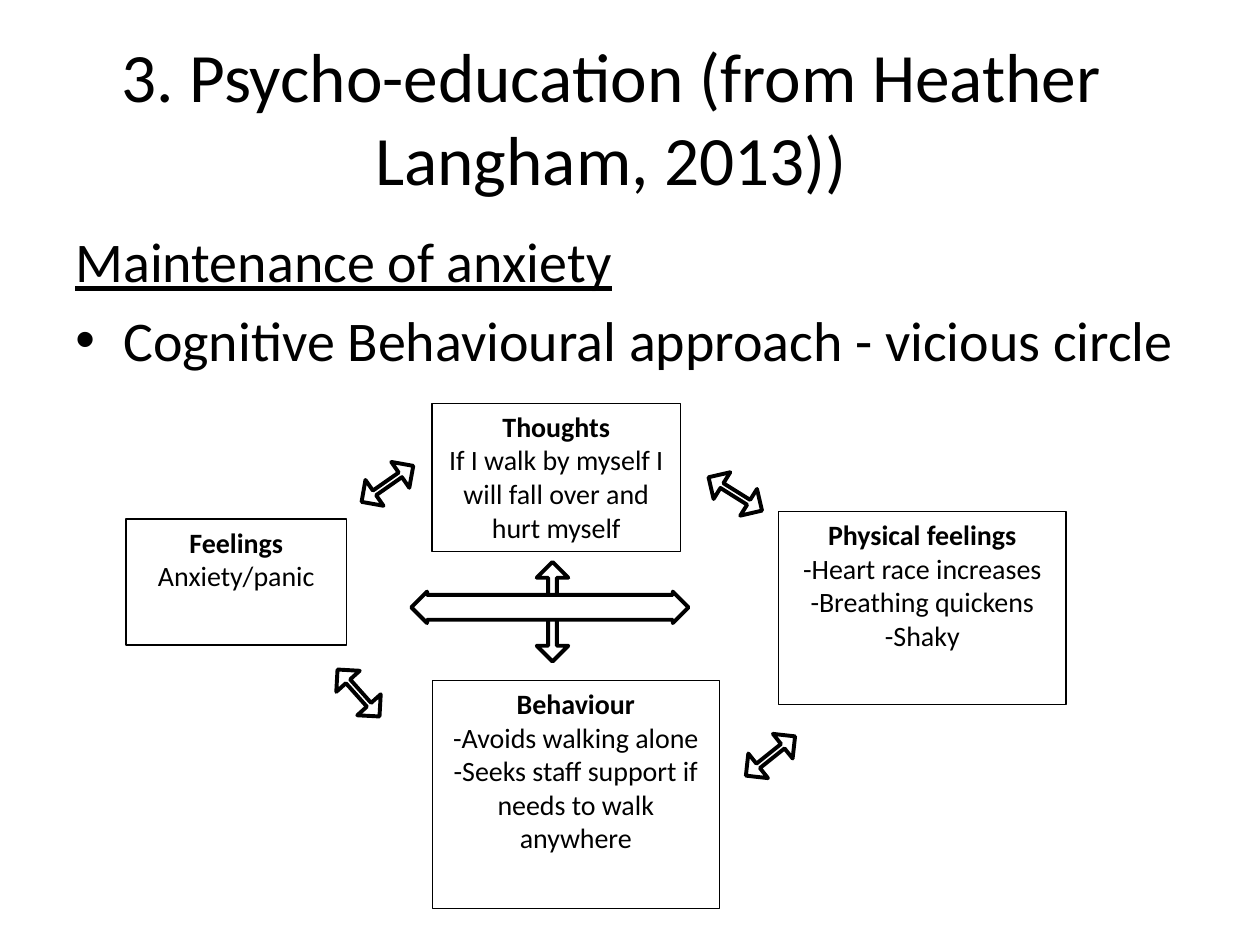
from pptx import Presentation
from pptx.dml.color import RGBColor as Rgb
from pptx.enum.shapes import MSO_SHAPE as Shape
from pptx.enum.text import MSO_ANCHOR as Anchor, PP_ALIGN as Align
from pptx.oxml.ns import qn
from pptx.util import Emu, Pt
from lxml.etree import SubElement

SCALE = 9144
FONT = "Calibri"
COLOURS = {"ink": "000000", "paper": "FFFFFF"}


def px(length):
    """Turn px, 100 to the inch, into EMU."""
    return Emu(length * SCALE)


def colour(name):
    """Look up a colour by its role."""
    return Rgb.from_string(COLOURS[name])


def write(frame, text, size=16, bold=False, underline=False, align=Align.CENTER,
          before=0, bullet=None, indent=0):
    """Add one formatted paragraph to a text frame."""
    para = frame.paragraphs[0]
    if para.runs:
        para = frame.add_paragraph()
    para.alignment = align
    para.space_before = Pt(before)
    props = para._p.get_or_add_pPr()
    props.set("marL", str(px(indent)))
    props.set("indent", str(px(-indent)))
    if bullet:
        SubElement(props, qn("a:buFont"), typeface="Arial")
        SubElement(props, qn("a:buChar"), char=bullet)
    else:
        SubElement(props, qn("a:buNone"))
    span = para.add_run()
    span.text = text
    span.font.name = FONT
    span.font.size = Pt(size)
    span.font.bold = bold
    span.font.underline = underline
    span.font.color.rgb = colour("ink")


def add_frame(page, box, anchor=Anchor.TOP):
    """Add a wrapping text box and return its frame."""
    frame = page.shapes.add_textbox(*map(px, box)).text_frame
    frame.word_wrap = True
    frame.vertical_anchor = anchor
    return frame


def add_outlined(page, kind, box, width):
    """Add a preset shape with a black outline and no shadow."""
    shape = page.shapes.add_shape(kind, *map(px, box))
    shape.shadow.inherit = False
    shape.line.color.rgb = colour("ink")
    shape.line.width = Pt(width)
    return shape


def add_title(page, box):
    """Write the slide title."""
    frame = add_frame(page, box, Anchor.MIDDLE)
    write(frame, "3. Psycho-education (from Heather Langham, 2013))", size=39.6)


def add_body(page, box):
    """Write the heading and the bullet."""
    frame = add_frame(page, box)
    style = {"size": 32, "align": Align.LEFT, "before": 6.4, "indent": 38}
    write(frame, "Maintenance of anxiety", underline=True, **style)
    write(frame, "Cognitive Behavioural approach - vicious circle", bullet="•", **style)


def add_card(page, box, heading, lines):
    """Draw one outlined card with a bold heading."""
    card = add_outlined(page, Shape.RECTANGLE, box, 0.75)
    card.fill.background()
    frame = card.text_frame
    frame.word_wrap = True
    frame.vertical_anchor = Anchor.TOP
    write(frame, heading, bold=True)
    for line in lines:
        write(frame, line)


def add_arrow(page, box, turn, head):
    """Draw one turned double-headed arrow."""
    arrow = add_outlined(page, Shape.UP_DOWN_ARROW, box, 2.25)
    arrow.fill.solid()
    arrow.fill.fore_color.rgb = colour("paper")
    arrow.rotation = turn
    arrow.adjustments[0] = 0.55
    arrow.adjustments[1] = head


def add_circle(page, box):
    """Draw the vicious circle of cards and arrows."""
    left, top = box[:2]
    cards = [
        ((243, 0, 197, 118), "Thoughts",
         ["If I walk by myself I will fall over and hurt myself"]),
        ((0, 92, 175, 100), "Feelings", ["Anxiety/panic"]),
        ((518, 86, 228, 153), "Physical feelings",
         ["-Heart race increases", "-Breathing quickens", "-Shaky"]),
        ((243, 220, 228, 181), "Behaviour",
         ["-Avoids walking alone", "-Seeks staff support if needs to walk anywhere"]),
    ]
    arrows = [
        (471, 47, 50, 122, 0.18),
        (172, 205, 50, 138.2, 0.18),
        (195, 39, 50, 235.1, 0.18),
        (499, 255, 50, 231.4, 0.18),
        (326, 126, 79, 180, 0.28),
        (324, 52, 220, 270, 0.79),
    ]
    for (x, y, width, height), heading, lines in cards:
        add_card(page, (left + x, top + y, width, height), heading, lines)
    for x, y, length, turn, head in arrows:
        add_arrow(page, (left + x, top + y, 25, length), turn, head)


def main():
    """Build the slide and save it."""
    deck = Presentation()
    deck.slide_width, deck.slide_height = px(1000), px(750)
    page = deck.slides.add_slide(deck.slide_layouts[6])
    page.background.fill.solid()
    page.background.fill.fore_color.rgb = colour("paper")
    add_title(page, (20, 30, 930, 125))
    add_body(page, (50, 175, 900, 495))
    add_circle(page, (100, 320, 746, 401))
    deck.save("out.pptx")


if __name__ == "__main__":
    main()
